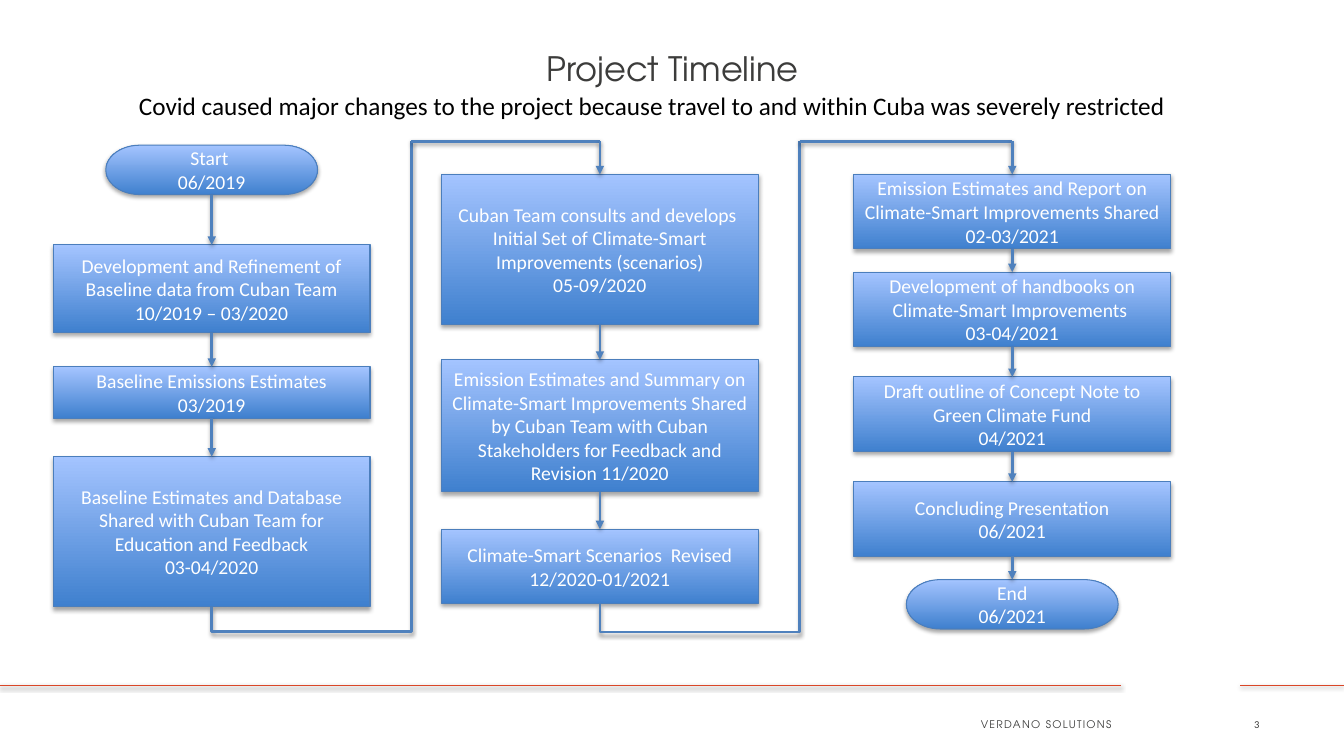
from pptx import Presentation
from pptx.dml.color import RGBColor
from pptx.enum import shapes, text
from pptx.oxml import parse_xml
from pptx.oxml.ns import nsdecls
from pptx.util import Inches, Pt

BOX_WIDTH, TERMINATOR_WIDTH = 3.14, 2.1
LANE_TOP, LANE_FLOOR, LANE_OFFSET = 1.4, 6.27, 1.98
BODY_FONT, BRAND_FONT = "Calibri", "TeX Gyre Adventor"
GREY, ARROW_BLUE, RULE_RED = "3C3C3B", "4F81BD", "DA4627"

PROCESS = shapes.MSO_SHAPE.FLOWCHART_PROCESS
TERMINATOR = shapes.MSO_SHAPE.FLOWCHART_TERMINATOR

# Each column: centre, then steps as (kind, top, height, wording)
COLUMNS = [
    (2.1, [
        (TERMINATOR, 1.44, 0.49, "Start \n06/2019"),
        (PROCESS, 2.43, 0.87, "Development and Refinement of Baseline data "
                              "from Cuban Team 10/2019 – 03/2020"),
        (PROCESS, 3.64, 0.51, "Baseline Emissions Estimates\n03/2019"),
        (PROCESS, 4.53, 1.49, "Baseline Estimates and Database Shared with Cuban Team "
                              "for Education and Feedback\n03-04/2020"),
    ]),
    (5.95, [
        (PROCESS, 1.73, 1.49, "Cuban Team consults and develops \nInitial Set of "
                              "Climate-Smart Improvements (scenarios)\n05-09/2020"),
        (PROCESS, 3.57, 1.31, "Emission Estimates and Summary on Climate-Smart "
                              "Improvements Shared by Cuban Team with Cuban "
                              "Stakeholders for Feedback and Revision 11/2020"),
        (PROCESS, 5.25, 0.74, "Climate-Smart Scenarios  Revised\n12/2020-01/2021"),
    ]),
    (10.04, [
        (PROCESS, 1.73, 0.74, "Emission Estimates and Report on Climate-Smart "
                              "Improvements Shared\n02-03/2021"),
        (PROCESS, 2.7, 0.74, "Development of handbooks on Climate-Smart "
                             "Improvements \n03-04/2021"),
        (PROCESS, 3.74, 0.74, "Draft outline of Concept Note to Green Climate Fund\n04/2021"),
        (PROCESS, 4.78, 0.74, "Concluding Presentation\n06/2021"),
        (TERMINATOR, 5.75, 0.49, "End\n06/2021"),
    ]),
]


def color(hex_value):
    return RGBColor.from_string(hex_value)


def add_shadow(shape, opacity):
    shape._element.spPr.append(parse_xml(
        f'<a:effectLst {nsdecls("a")}><a:outerShdw blurRad="{Pt(3.1)}" dist="{Pt(1.7)}" '
        f'dir="5400000" rotWithShape="0"><a:srgbClr val="000000">'
        f'<a:alpha val="{opacity * 1000}"/></a:srgbClr></a:outerShdw></a:effectLst>'))


def write(shape, wording, size, hex_color, font=BODY_FONT,
          align=text.PP_ALIGN.CENTER, wrap=True):
    frame = shape.text_frame
    frame.text = wording
    frame.word_wrap = wrap
    frame.vertical_anchor = text.MSO_ANCHOR.MIDDLE
    for paragraph in frame.paragraphs:
        paragraph.alignment = align
        for run in paragraph.runs:
            run.font.size, run.font.name = Pt(size), font
            run.font.color.rgb = color(hex_color)


def add_label(slide, left, top, width, height, wording, size, hex_color, **options):
    label = slide.shapes.add_textbox(Inches(left), Inches(top), Inches(width), Inches(height))
    write(label, wording, size, hex_color, **options)
    return label


def add_step(slide, center, kind, top, height, wording):
    width = TERMINATOR_WIDTH if kind == TERMINATOR else BOX_WIDTH
    step = slide.shapes.add_shape(kind, Inches(center - width / 2), Inches(top),
                                  Inches(width), Inches(height))
    step.fill.gradient()
    step.fill.gradient_angle = 90
    for stop, hex_color in zip(step.fill.gradient_stops, ("3F80CE", "A4C4FF")):
        stop.color.rgb = color(hex_color)
    step.line.color.rgb = color("4B7EBC")
    step.line.width = Pt(0.75)
    add_shadow(step, 35)
    write(step, wording, 14, "FFFFFF")
    return step


def add_line(slide, start, end, hex_color=ARROW_BLUE, width=2, arrow=False,
             kind=shapes.MSO_CONNECTOR.STRAIGHT):
    line = slide.shapes.add_connector(kind, *map(Inches, start + end))
    line.line.color.rgb = color(hex_color)
    line.line.width = Pt(width)
    if arrow:
        line.line._get_or_add_ln().append(
            parse_xml(f'<a:tailEnd {nsdecls("a")} type="triangle"/>'))
    add_shadow(line, 38)
    return line


def join_steps(slide, upper, lower):
    arrow = add_line(slide, (0, 0), (1, 1), arrow=True)
    arrow.begin_connect(upper, 2)
    arrow.end_connect(lower, 0)


def join_columns(slide, center, bottom, next_center, next_step):
    # Quarter-turned elbow: down from the last step, across, and up the lane
    lane = center + LANE_OFFSET
    rise = bottom - LANE_TOP
    middle_x, middle_y = (center + lane) / 2, (bottom + LANE_TOP) / 2
    elbow = add_line(slide,
                     (middle_x + rise / 2, middle_y + LANE_OFFSET / 2),
                     (middle_x - rise / 2, middle_y - LANE_OFFSET / 2),
                     kind=shapes.MSO_CONNECTOR.ELBOW)
    properties = elbow._element.spPr
    properties.xfrm.set("rot", "5400000")
    bend = round((bottom - LANE_FLOOR) / rise * 100000)
    properties.prstGeom.get_or_add_avLst().append(
        parse_xml(f'<a:gd {nsdecls("a")} name="adj1" fmla="val {bend}"/>'))
    # Across the top and into the next column
    add_line(slide, (lane, LANE_TOP), (next_center, LANE_TOP))
    entry = add_line(slide, (next_center, LANE_TOP), (next_center, LANE_TOP + 0.33), arrow=True)
    entry.end_connect(next_step, 0)


def main():
    presentation = Presentation()
    presentation.slide_width, presentation.slide_height = Inches(13.33), Inches(7.5)
    slide = presentation.slides.add_slide(presentation.slide_layouts[5])

    # Footer rule and labels
    for start, end in ((13.33, 12.3), (11.12, 0)):
        add_line(slide, (start, 6.8), (end, 6.8), RULE_RED, 0.75)
    footer = add_label(slide, 6.9, 6.99, 4.22, 0.4, "VERDANO SOLUTIONS", 7.5, GREY,
                       font=BRAND_FONT, align=text.PP_ALIGN.RIGHT)
    footer.text_frame.paragraphs[0].runs[0].font._element.set("spc", "90")
    add_label(slide, 12.34, 6.99, 0.82, 0.4, "3", 7.5, GREY, align=text.PP_ALIGN.LEFT)

    # Title and subtitle
    title = slide.shapes.title
    title.left, title.top, title.width, title.height = map(Inches, (0.67, 0.05, 12, 1.25))
    write(title, "Project Timeline", 24, GREY, font=BRAND_FONT)
    add_label(slide, 1.28, 0.85, 10.44, 0.4,
              "Covid caused major changes to the project because travel to and within "
              "Cuba was severely restricted", 18, "000000",
              align=text.PP_ALIGN.LEFT, wrap=False)

    # Steps and the arrows between them
    columns = [[add_step(slide, center, *step) for step in steps] for center, steps in COLUMNS]
    for column in columns:
        for upper, lower in zip(column, column[1:]):
            join_steps(slide, upper, lower)

    # Links from the foot of each column to the head of the next
    for index in range(len(COLUMNS) - 1):
        center, steps = COLUMNS[index]
        _, top, height, _ = steps[-1]
        join_columns(slide, center, top + height, COLUMNS[index + 1][0], columns[index + 1][0])

    presentation.save("out.pptx")


if __name__ == "__main__":
    main()
